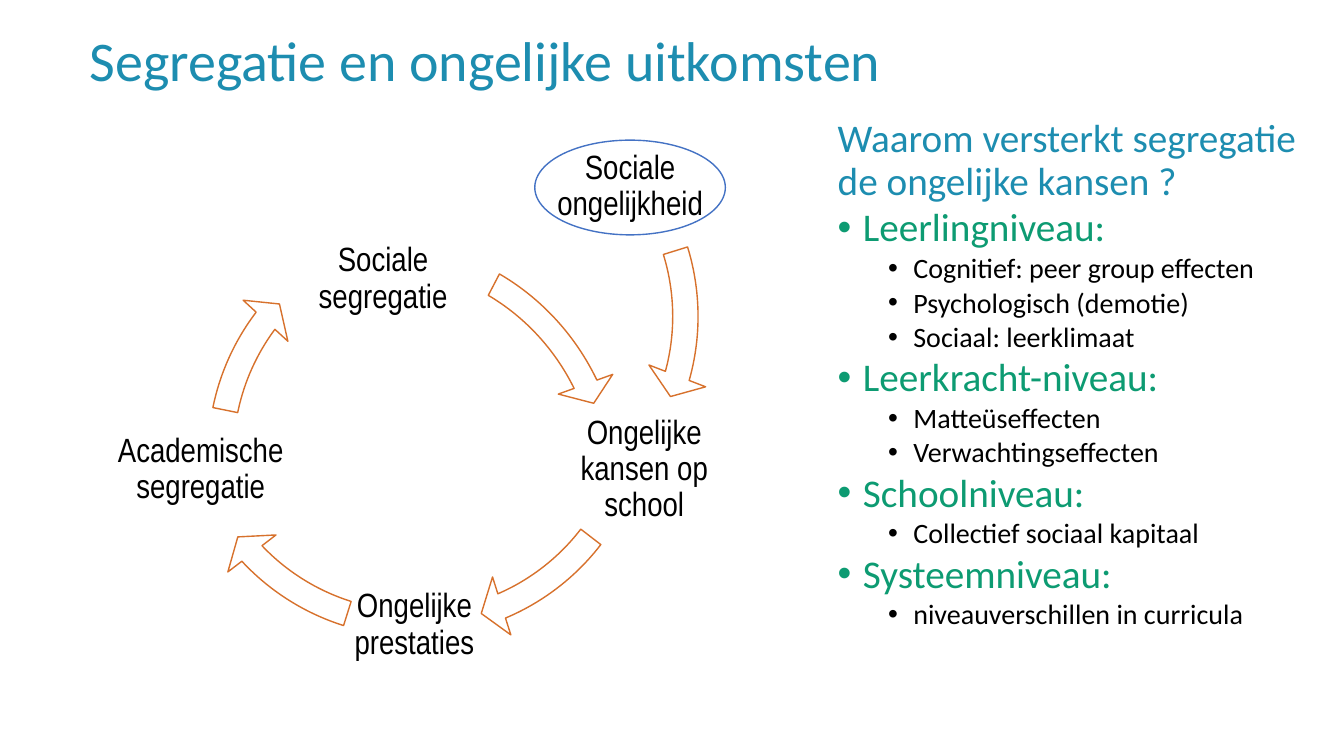
from lxml import etree
from pptx import Presentation
from pptx.dml.color import RGBColor
from pptx.enum.shapes import MSO_SHAPE
from pptx.enum.text import MSO_ANCHOR, MSO_AUTO_SIZE, PP_ALIGN
from pptx.oxml.ns import qn
from pptx.util import Inches, Pt

LEFT, CENTER = PP_ALIGN.LEFT, PP_ALIGN.CENTER
TOP, MIDDLE = MSO_ANCHOR.TOP, MSO_ANCHOR.MIDDLE
NO_AUTOFIT = MSO_AUTO_SIZE.NONE
CIRCULAR_ARROW, OVAL = MSO_SHAPE.CIRCULAR_ARROW, MSO_SHAPE.OVAL

BLUE, GREEN, BLACK, WHITE = "1D8DB0", "0D9B72", "000000", "FFFFFF"
ORANGE, OUTLINE_BLUE = "D7712C", "4472C4"

TITLE = "Segregatie en ongelijke uitkomsten"
QUESTION = "Waarom versterkt segregatie de ongelijke kansen ?"
LEVELS = {
    "Leerlingniveau:": ["Cognitief: peer group effecten", "Psychologisch (demotie)",
                        "Sociaal: leerklimaat"],
    "Leerkracht-niveau:": ["Matteüseffecten", "Verwachtingseffecten"],
    "Schoolniveau:": ["Collectief sociaal kapitaal"],
    "Systeemniveau:": ["niveauverschillen in curricula"],
}

RING_WIDTH, RING_HEIGHT = 37.65, 66.93
ARROWS = [
    (34.43, 41.87, RING_HEIGHT, 20.6, 212.93, 193.33),
    (29.33, 62.93, 63.73, 61.3, 163.89, 141.75),
    (30.83, 53.07, RING_HEIGHT, 0, 40.14, 22.54),
    (30.83, 53.07, RING_HEIGHT, 0, 82.1, 64.5),
    (33, 60.13, RING_HEIGHT, 12, 122.97, 107.71),
]

LABEL_HEIGHT = 17.87
LABELS = [
    ("Sociale ongelijkheid", 46.88, 24.67, 14.55),
    ("Ongelijke kansen op school", 47.93, 62.13, 10.05),
    ("Ongelijke prestaties", 30.83, 82.67, 10.05),
    ("Academische segregatie", 14.93, 62.13, 15.45),
    ("Sociale segregatie", 28.5, 36.93, 10.05),
]


def color(value):
    return RGBColor.from_string(value)


class SlideBuilder:
    font = "Calibri"
    label_font = "Arial Narrow"

    def __init__(self, deck):
        self.deck = deck
        self.page = deck.slides.add_slide(deck.slide_layouts[1])

    def across(self, percent):
        return round(self.deck.slide_width * percent / 100)

    def down(self, percent):
        return round(self.deck.slide_height * percent / 100)

    def area(self, left, top, width, height):
        return self.across(left), self.down(top), self.across(width), self.down(height)

    def centered(self, x, y, width, height):
        return self.area(x - width / 2, y - height / 2, width, height)

    def set_text(self, para, text, size, hue, font=font, align=LEFT):
        para.text = text
        para.alignment = align
        para.line_spacing = 0.9
        para.font.name = font
        para.font.size = Pt(size)
        para.font.color.rgb = color(hue)

    def placeholder(self, box, area, anchor):
        box.left, box.top, box.width, box.height = area
        frame = box.text_frame
        frame.auto_size = NO_AUTOFIT
        frame.vertical_anchor = anchor
        frame.word_wrap = True
        return frame

    def title(self, text, area):
        frame = self.placeholder(self.page.shapes.title, area, MIDDLE)
        self.set_text(frame.paragraphs[0], text, 40, BLUE)

    def bullet(self, para, margin):
        properties = para._p.get_or_add_pPr()
        properties.set("marL", str(Inches(margin)))
        properties.set("indent", str(Inches(-0.25) if margin else 0))
        if margin:
            etree.SubElement(properties, qn("a:buFont")).set("typeface", "Arial")
            etree.SubElement(properties, qn("a:buChar")).set("char", "•")
        else:
            etree.SubElement(properties, qn("a:buNone"))
        properties.append(properties.find(qn("a:defRPr")))

    def body(self, question, levels, area):
        frame = self.placeholder(self.page.placeholders[1], area, TOP)
        para = frame.paragraphs[0]
        self.set_text(para, question, 28, BLUE)
        para.space_before = Pt(10)
        self.bullet(para, 0)
        for heading, effects in levels.items():
            self.item(frame, heading, 0, 28, GREEN)
            for effect in effects:
                self.item(frame, effect, 1, 20, BLACK)

    def item(self, frame, text, level, size, hue):
        para = frame.add_paragraph()
        para.level = level
        self.set_text(para, text, size, hue)
        para.space_before = Pt(3)
        self.bullet(para, 0.25 + 0.5 * level)

    def outline(self, kind, area, hue):
        shape = self.page.shapes.add_shape(kind, *area)
        shape.shadow.inherit = False
        shape.line.color.rgb = color(hue)
        shape.line.width = Pt(1)
        return shape

    def arrow(self, x, y, height, rotation, end, start):
        shape = self.outline(CIRCULAR_ARROW, self.centered(x, y, RING_WIDTH, height), ORANGE)
        shape.fill.solid()
        shape.fill.fore_color.rgb = color(WHITE)
        shape.rotation = rotation
        for index, value in enumerate((0.05, 3.36, end, start, 0.06)):
            shape.adjustments[index] = value

    def label(self, text, x, y, width):
        box = self.page.shapes.add_textbox(*self.centered(x, y, width, LABEL_HEIGHT))
        frame = box.text_frame
        frame.word_wrap = True
        frame.vertical_anchor = MIDDLE
        frame.margin_left = frame.margin_right = Inches(0.03)
        frame.margin_top = frame.margin_bottom = Inches(0.03)
        self.set_text(frame.paragraphs[0], text, 24, BLACK, self.label_font, CENTER)

    def ellipse(self, x, y, width, height):
        shape = self.outline(OVAL, self.centered(x, y, width, height), OUTLINE_BLUE)
        shape.fill.background()


def main():
    deck = Presentation()
    deck.slide_width, deck.slide_height = Inches(13.33), Inches(7.5)
    slide = SlideBuilder(deck)
    slide.title(TITLE, slide.area(5.93, 1.87, 91.13, 13.07))
    slide.body(QUESTION, LEVELS, slide.area(61.58, 15.07, 36.6, 72.8))
    for arrow in ARROWS:
        slide.arrow(*arrow)
    for label in LABELS:
        slide.label(*label)
    slide.ellipse(46.88, 24.8, 14.18, 12.53)
    deck.save("out.pptx")


if __name__ == "__main__":
    main()
